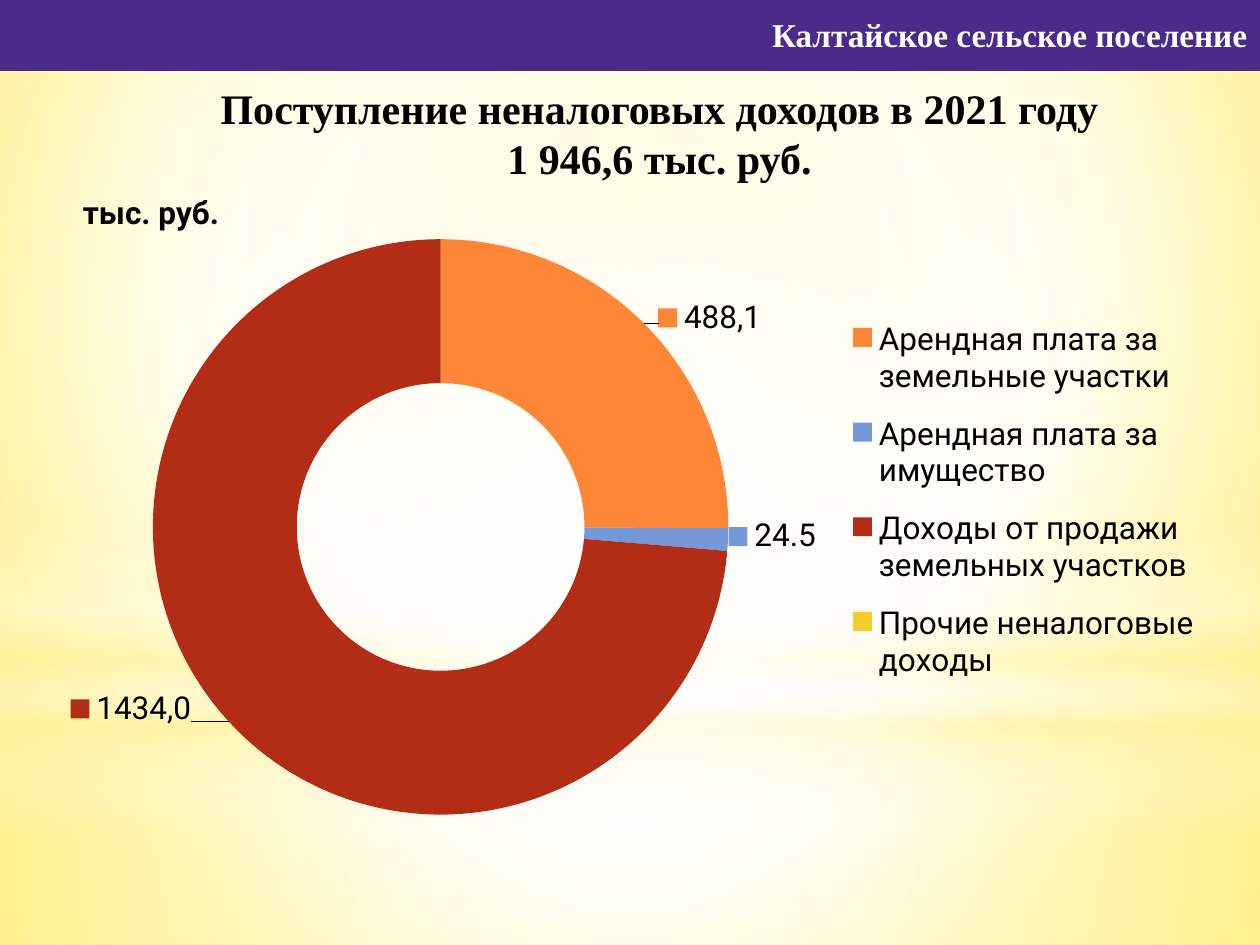
from dataclasses import dataclass

import pptx
import pptx.chart.data
import pptx.dml.color
import pptx.enum.chart
import pptx.enum.shapes
import pptx.enum.text
import pptx.oxml
import pptx.oxml.ns
import pptx.util

SCALE = 914400 / 126  # EMU per px
SHAPE = pptx.enum.shapes.MSO_SHAPE
ALIGN = pptx.enum.text.PP_ALIGN
qn = pptx.oxml.ns.qn
COLORS = {
    "white": "FFFFFF", "black": "000000", "banner": "4A2B89",
    "cream": "FFF39D", "lemon": "FFF18D", "gold": "FFE94E",
    "orange": "FE8637", "blue": "7598D9", "red": "B32C16", "yellow": "F5CD2D",
}
CENTRE = (50, 50, 50, 50)


@dataclass
class Glow:
    """Gradient layer; stops are (position %, colour, opacity %)."""
    box: tuple
    stops: list
    focus: tuple | None = CENTRE  # None means a vertical linear gradient
    shape: int = SHAPE.RECTANGLE


@dataclass
class Slice:
    name: str
    value: float
    color: str
    label: str | None = None  # wording that replaces the plain value
    offset: tuple | None = None  # label shift; None hides the label


GLOWS = [
    Glow((0, 703, 1260, 242),
         [(0, "white", 91), (37, "white", 76), (100, "cream", 79)]),
    Glow((0, 0, 1260, 703),
         [(0, "white", 89), (48, "white", 62), (100, "cream", 79)]),
    Glow((0, 519, 1260, 315),
         [(0, "white", 0), (29, "white", 30), (45, "cream", 40),
          (55, "white", 26), (65, "cream", 60), (100, "white", 0)], None),
    Glow((0, 220, 1260, 703), [(0, "white", 100), (56, "white", 0)],
         shape=SHAPE.OVAL),
]
SLICES = [
    Slice("Арендная плата за земельные участки", 488.1, "orange", "488,1", (0.1, -0.08)),
    Slice("Арендная плата за имущество", 24.5, "blue", None, (0.1, 0)),
    Slice("Доходы от продажи земельных участков", 1434, "red", "1434,0", (-0.13, 0.05)),
    Slice("Прочие неналоговые доходы", 0, "yellow"),
]


def px(*values: int) -> list:
    return [pptx.util.Emu(round(v * SCALE)) for v in values]


def rgb(name: str) -> pptx.dml.color.RGBColor:
    return pptx.dml.color.RGBColor.from_string(COLORS[name])


def style_font(font, size: int, face: str, color: str = "black", bold: bool = False) -> None:
    values = {"size": pptx.util.Pt(size), "name": face, "bold": bold}
    for key, value in values.items():
        setattr(font, key, value)
    font.color.rgb = rgb(color)


def set_gradient(fill, parent, stops: list, focus: tuple | None) -> None:
    fill.solid()
    gs = "".join(
        f'<a:gs pos="{pos * 1000}"><a:srgbClr val="{COLORS[color]}">'
        f'<a:alpha val="{alpha * 1000}"/></a:srgbClr></a:gs>'
        for pos, color, alpha in stops)
    if focus:
        edges = " ".join(f'{k}="{v * 1000}"' for k, v in zip("ltrb", focus))
        kind = f'<a:path path="circle"><a:fillToRect {edges}/></a:path>'
    else:
        kind = '<a:lin ang="5400000" scaled="0"/>'
    grad = pptx.oxml.parse_xml(
        f'<a:gradFill {pptx.oxml.ns.nsdecls("a")} rotWithShape="1">'
        f'<a:gsLst>{gs}</a:gsLst>{kind}</a:gradFill>')
    parent.replace(parent.find(qn("a:solidFill")), grad)


def add_shape(s, kind: int, box: tuple):
    sp = s.shapes.add_shape(kind, *px(*box))
    sp.shadow.inherit = False
    return sp


def add_glow(s, glow: Glow) -> None:
    sp = add_shape(s, glow.shape, glow.box)
    set_gradient(sp.fill, sp._element.spPr, glow.stops, glow.focus)
    sp.line.fill.background()


def write(sp, text: str, size: int, color: str, align: int) -> None:
    tf = sp.text_frame
    tf.word_wrap = True
    p = tf.paragraphs[0]
    p.text = text
    p.alignment = align
    for r in p.runs:
        style_font(r.font, size, "Times New Roman", color, True)


def set_layout(parent, after: str | None, inner: bool = False, edge: bool = True, **lengths) -> None:
    """Place a chart part by fractions of the chart area."""
    for old in parent.findall(qn("c:layout")):
        parent.remove(old)
    target = '<c:layoutTarget val="inner"/>' if inner else ""
    modes = '<c:xMode val="edge"/><c:yMode val="edge"/>' if edge else ""
    values = "".join(f'<c:{k} val="{v}"/>' for k, v in lengths.items())
    layout = pptx.oxml.parse_xml(
        f'<c:layout {pptx.oxml.ns.nsdecls("c")}><c:manualLayout>'
        f'{target}{modes}{values}</c:manualLayout></c:layout>')
    if after:
        parent.find(qn(after)).addnext(layout)
    else:
        parent.insert(0, layout)


def format_slice(series, i: int, item: Slice) -> None:
    point = series.points[i]
    point.format.fill.solid()
    point.format.fill.fore_color.rgb = rgb(item.color)
    point.format.line.fill.background()
    label = point.data_label
    if item.label:
        p = label.text_frame.paragraphs[0]
        p.text = item.label
        style_font(p.runs[0].font, 18, "Roboto")
    else:
        style_font(label.font, 18, "Roboto")
    node = series._element.xpath(f'c:dLbls/c:dLbl[c:idx/@val="{i}"]')[0]
    if item.offset:
        node.find(qn("c:showLegendKey")).set("val", "1")
        set_layout(node, "c:idx", edge=False, x=item.offset[0], y=item.offset[1])
    else:
        for child in list(node)[1:]:
            node.remove(child)
        node.append(pptx.oxml.parse_xml(
            f'<c:delete {pptx.oxml.ns.nsdecls("c")} val="1"/>'))


def add_doughnut(s, box: tuple) -> None:
    data = pptx.chart.data.CategoryChartData()
    data.categories = [item.name for item in SLICES]
    data.add_series("тыс. руб.", [item.value for item in SLICES])
    chart = s.shapes.add_chart(
        pptx.enum.chart.XL_CHART_TYPE.DOUGHNUT, *px(*box), data).chart
    style_font(chart.font, 18, "Roboto")
    chart.plots[0].vary_by_categories = True
    set_layout(chart._chartSpace.chart.plotArea, None, inner=True,
               x=0.085, y=0.104, w=0.496, h=0.806)
    # Title
    chart.has_title = True
    p = chart.chart_title.text_frame.paragraphs[0]
    p.text = "тыс. руб."
    style_font(p.runs[0].font, 18, "Roboto", bold=True)
    set_layout(chart.chart_title._element, "c:tx", x=0.02, y=0.03)
    # Legend
    chart.has_legend = True
    chart.legend.position = pptx.enum.chart.XL_LEGEND_POSITION.RIGHT
    chart.legend.include_in_layout = False
    style_font(chart.legend.font, 18, "Roboto")
    set_layout(chart.legend._element, "c:legendPos", x=0.68, y=0.19, w=0.31, h=0.56)
    # Slices and their labels
    for i, item in enumerate(SLICES):
        format_slice(chart.plots[0].series[0], i, item)


def main() -> None:
    prs = pptx.Presentation()
    prs.slide_width, prs.slide_height = px(1260, 945)
    s = prs.slides.add_slide(prs.slide_layouts[6])

    # Background
    fill = s.background.fill
    set_gradient(fill, s._element.find(".//" + qn("p:bgPr")),
                 [(0, "lemon", 100), (60, "white", 100), (100, "gold", 100)],
                 (20, 10, 20, 60))
    for glow in GLOWS:
        add_glow(s, glow)

    # Banner
    banner = add_shape(s, SHAPE.RECTANGLE, (0, 0, 1260, 69))
    banner.fill.solid()
    banner.fill.fore_color.rgb = rgb("banner")
    banner.line.color.rgb = rgb("banner")
    banner.line.width = pptx.util.Pt(2)
    banner.text_frame.vertical_anchor = pptx.enum.text.MSO_ANCHOR.MIDDLE
    write(banner, "Калтайское сельское поселение", 19, "white", ALIGN.RIGHT)

    # Heading
    heading = s.shapes.add_textbox(*px(74, 76, 1171, 115))
    write(heading, "Поступление неналоговых доходов в 2021 году\v1 946,6 тыс. руб.",
          24, "black", ALIGN.CENTER)

    # Income chart
    add_doughnut(s, (54, 165, 1161, 714))
    prs.save("out.pptx")


if __name__ == "__main__":
    main()
